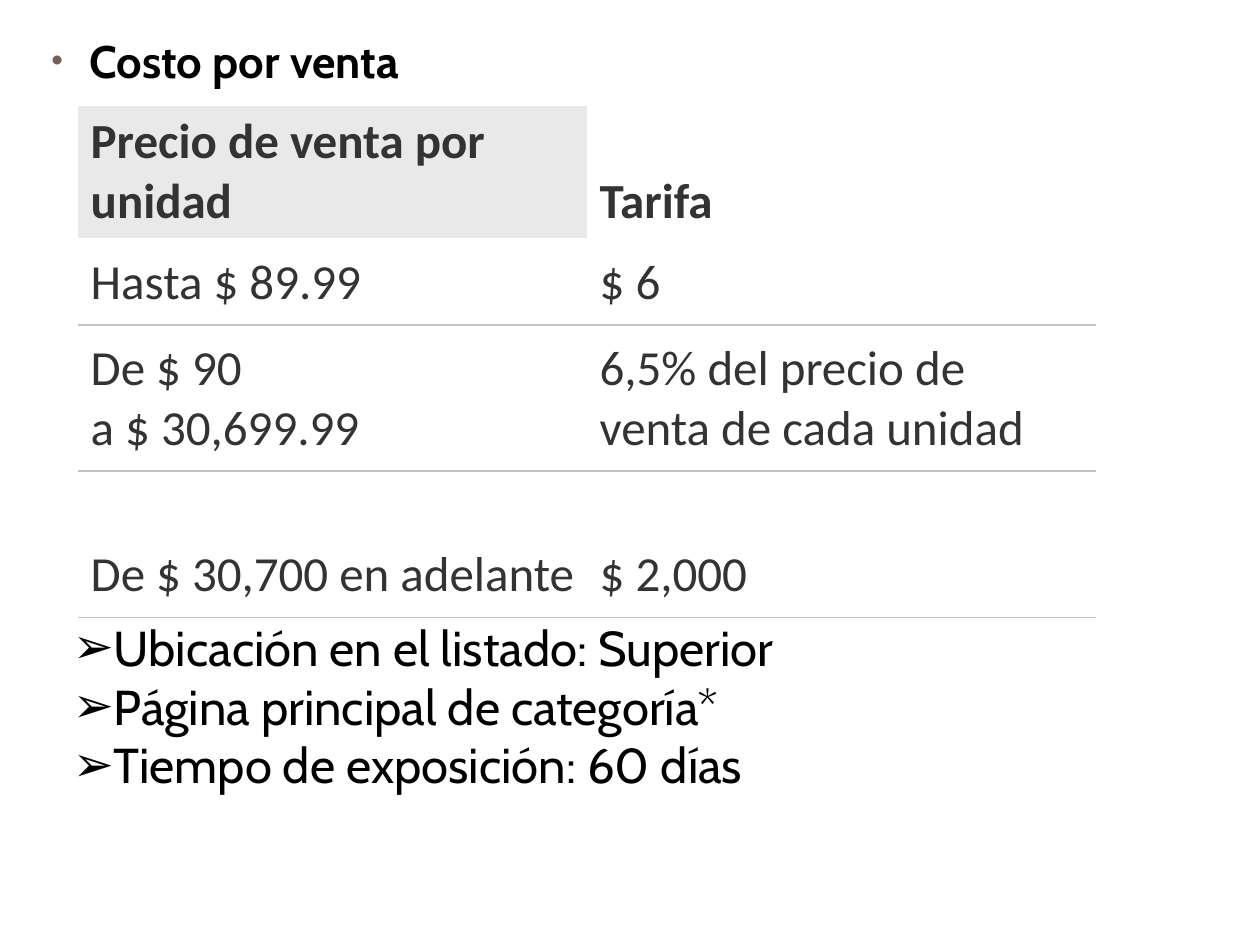
"""Build the slide with sale costs, listing position and exposure time."""
from lxml import etree
from pptx import Presentation
from pptx.dml.color import RGBColor
from pptx.enum.text import MSO_ANCHOR
from pptx.oxml.ns import qn
from pptx.util import Inches, Pt

BOTTOM = MSO_ANCHOR.BOTTOM
BLACK, GRAY, HEADER_FILL, BORDER = "000000", "333333", "E9E9E9", "C2C2C2"


def style_font(paragraph, name, size, color, bold=False):
    paragraph.font.name = name
    paragraph.font.size = Pt(size)
    paragraph.font.bold = bold
    paragraph.font.color.rgb = RGBColor.from_string(color)


def add_bullet(paragraph, character, color=None, percent=100):
    properties = paragraph._p.get_or_add_pPr()
    if color:
        bullet_color = etree.SubElement(properties, qn("a:buClr"))
        etree.SubElement(bullet_color, qn("a:srgbClr"), val=color)
    etree.SubElement(properties, qn("a:buSzPct"), val=str(percent * 1000))
    etree.SubElement(properties, qn("a:buFont"), typeface="Arial")
    etree.SubElement(properties, qn("a:buChar"), char=character)
    return properties


presentation = Presentation()
presentation.slide_width = Inches(10)
presentation.slide_height = Inches(7.5)
slide = presentation.slides.add_slide(presentation.slide_layouts[6])

heading = slide.shapes.add_textbox(Inches(0.31), Inches(0.21), Inches(4.18), Inches(0.73))
heading.text_frame.word_wrap = True
paragraph = heading.text_frame.paragraphs[0]
paragraph.text = "Costo por venta"
properties = add_bullet(paragraph, "•", "775F55", 73)
properties.set("marL", str(Inches(0.3)))
properties.set("indent", str(Inches(-0.3)))
style_font(paragraph, "Cabin", 26, BLACK, bold=True)

rates = [
    ("Precio de venta por unidad", "Tarifa"),
    ("Hasta $ 89.99", "$ 6"),
    ("De $ 90\va $ 30,699.99", "6,5% del precio de venta de cada unidad"),
    ("De $ 30,700 en adelante", "$ 2,000"),
]
row_heights = [1.05, 0.69, 1.16, 1.16]
table = slide.shapes.add_table(
    len(rates), 2, Inches(0.62), Inches(0.84), Inches(8.08), Inches(sum(row_heights))
).table
table.first_row = False
table.horz_banding = False
for row_index, (labels, height) in enumerate(zip(rates, row_heights)):
    table.rows[row_index].height = Inches(height)
    is_header = row_index == 0
    for column_index, label in enumerate(labels):
        cell = table.cell(row_index, column_index)
        cell.text = label
        cell.vertical_anchor = BOTTOM
        cell.margin_top = cell.margin_bottom = Inches(0.05 if is_header else 0.1)
        paragraph = cell.text_frame.paragraphs[0]
        paragraph.space_after = Pt(10)
        style_font(paragraph, "Calibri", 28, GRAY, bold=is_header)

        ruled_sides = {0: "", 1: "B"}.get(row_index, "TB")
        for side in "LRTB":
            line = etree.SubElement(cell._tc.get_or_add_tcPr(), qn(f"a:ln{side}"), w=str(Pt(1)))
            if side in ruled_sides:
                line_fill = etree.SubElement(line, qn("a:solidFill"))
                etree.SubElement(line_fill, qn("a:srgbClr"), val=BORDER)
            else:
                etree.SubElement(line, qn("a:noFill"))
        if is_header and column_index == 0:
            cell.fill.solid()
            cell.fill.fore_color.rgb = RGBColor.from_string(HEADER_FILL)
        else:
            cell.fill.background()

features = [
    "Ubicación en el listado: Superior",
    "Página principal de categoría*",
    "Tiempo de exposición: 60 días",
]
feature_box = slide.shapes.add_textbox(Inches(0.48), Inches(4.85), Inches(6.25), Inches(1.88))
feature_box.text_frame.word_wrap = True
feature_box.text_frame.text = "\n".join(features)
for paragraph in feature_box.text_frame.paragraphs:
    add_bullet(paragraph, "➢")
    style_font(paragraph, "Cabin", 28, BLACK)

presentation.save("out.pptx")
